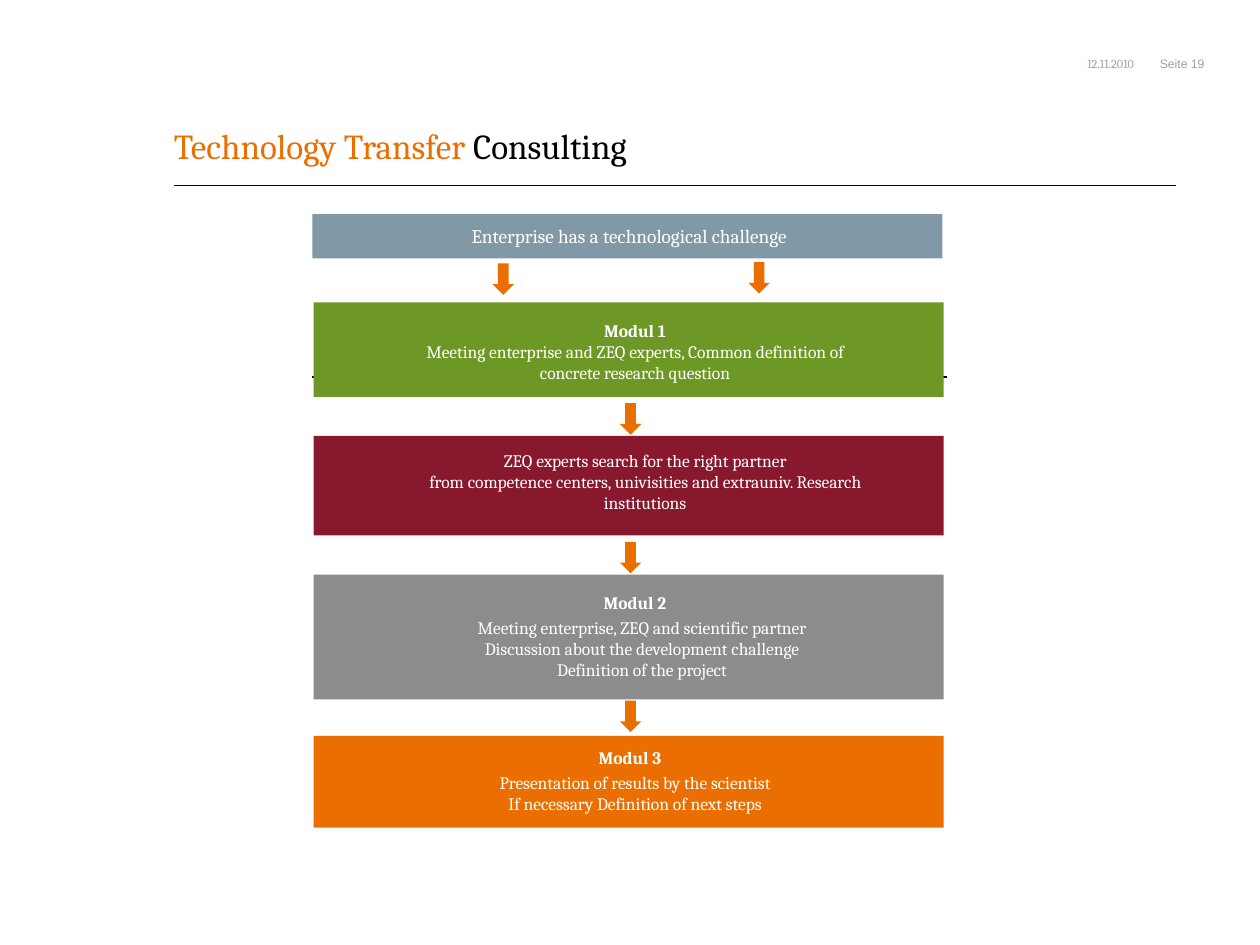
from pptx import Presentation
from pptx.dml.color import RGBColor
from pptx.enum.shapes import MSO_CONNECTOR, MSO_SHAPE
from pptx.enum.text import MSO_ANCHOR, PP_ALIGN
from pptx.oxml.ns import qn
from pptx.util import Inches, Pt
from lxml import etree

COLORS = {
    "orange": "EB6E00", "blue": "8199A7", "green": "6E9825", "red": "88182E",
    "gray": "8C8C8C", "muted": "A0A0A0", "white": "FFFFFF", "black": "000000",
}
STEP_LEFT, STEP_WIDTH = 2.49, 5
PADDING = (0.1, 0.05)


def color(name):
    return RGBColor.from_string(COLORS[name])


def add_text(slide, box, paragraphs, size, fill, align=PP_ALIGN.CENTER,
             font="Cambria", bold=None, wrap=True, inset=(0, 0)):
    frame = slide.shapes.add_textbox(*map(Inches, box)).text_frame
    frame.word_wrap = wrap
    frame.margin_left = frame.margin_right = Inches(inset[0])
    frame.margin_top = frame.margin_bottom = Inches(inset[1])
    for index, text in enumerate(paragraphs):
        paragraph = frame.paragraphs[0] if index == 0 else frame.add_paragraph()
        paragraph.text = text
        paragraph.alignment = align
        paragraph.font.name = font
        paragraph.font.size = Pt(size)
        paragraph.font.bold = bold
        paragraph.font.color.rgb = color(fill)
    return frame


def add_block(slide, preset, box, fill):
    block = slide.shapes.add_shape(preset, *map(Inches, box))
    block.shadow.inherit = False
    block.fill.solid()
    block.fill.fore_color.rgb = color(fill)
    block.line.fill.background()


def add_rule(slide, left, top, width, weight):
    rule = slide.shapes.add_connector(
        MSO_CONNECTOR.STRAIGHT, Inches(left), Inches(top),
        Inches(left + width), Inches(top))
    rule.line.color.rgb = color("black")
    rule.line.width = Pt(weight)
    etree.SubElement(rule._element.spPr, qn("a:effectLst"))


def add_header(slide, left, top):
    add_text(slide, (left, top, 0.56, 0.12), ["12.11.2010"], 7, "muted",
             PP_ALIGN.RIGHT)
    add_text(slide, (left + 0.67, top, 0.45, 0.12), ["Seite 19"], 7, "muted",
             PP_ALIGN.RIGHT, font="Arial", wrap=False)


def add_title(slide, left, top, width, height):
    frame = add_text(slide, (left, top, width, height), [""], 20, "black",
                     PP_ALIGN.LEFT)
    frame.vertical_anchor = MSO_ANCHOR.BOTTOM
    title = frame.paragraphs[0]
    title.line_spacing = Pt(24)
    for text, fill in (("Technology Transfer ", "orange"), ("Consulting", "black")):
        run = title.add_run()
        run.text = text
        run.font.name = "Cambria"
        run.font.size = Pt(20)
        run.font.color.rgb = color(fill)
    add_rule(slide, left, top + 0.87, 7.95, 0.75)


def add_challenge(slide, left, top, width, height):
    add_block(slide, MSO_SHAPE.RECTANGLE, (left, top, width, height), "blue")
    add_text(slide, (left + 1.15, top + 0.08, 2.73, 0.19),
             ["Enterprise has a technological challenge"], 11, "white", wrap=False)


def add_meeting(slide, left, top, width, height):
    add_rule(slide, left - 0.01, top + 0.59, width + 0.04, 1)
    add_block(slide, MSO_SHAPE.RECTANGLE, (left, top, width, height), "green")
    frame = add_text(slide, (left + 0.62, top + 0.09, 3.86, 0.61),
                     ["Modul 1\vMeeting enterprise and ZEQ experts, Common "
                      "definition of concrete research question"],
                     10, "white", inset=PADDING)
    frame.paragraphs[0].runs[0].font.bold = True


def add_search(slide, left, top, width, height):
    add_block(slide, MSO_SHAPE.RECTANGLE, (left, top, width, height), "red")
    add_text(slide, (left + 0.78, top + 0.11, 3.7, 0.5),
             ["ZEQ experts search for the right partner",
              "from competence centers, univisities and extrauniv. "
              "Research institutions"], 10, "white")


def add_module(slide, box, fill, heading, heading_offset, lines, lines_box):
    left, top = box[:2]
    add_block(slide, MSO_SHAPE.RECTANGLE, box, fill)
    add_text(slide, (left + heading_offset[0], top + heading_offset[1], 4.96, 0.27),
             [heading], 10, "white", bold=True, inset=PADDING)
    dx, dy, width, height = lines_box
    add_text(slide, (left + dx, top + dy, width, height), lines, 10, "white",
             wrap=False)


def add_arrows(slide, positions):
    for left, top in positions:
        add_block(slide, MSO_SHAPE.DOWN_ARROW, (left, top, 0.17, 0.25), "orange")


def main():
    deck = Presentation()
    deck.slide_width, deck.slide_height = Inches(10), Inches(7.5)
    slide = deck.slides.add_slide(deck.slide_layouts[6])

    add_header(slide, 8.44, 0.45)
    add_title(slide, 1.38, 0.6, 8.16, 0.72)
    add_challenge(slide, 2.48, 1.7, STEP_WIDTH, 0.35)
    add_meeting(slide, STEP_LEFT, 2.4, STEP_WIDTH, 0.75)
    add_search(slide, STEP_LEFT, 3.46, STEP_WIDTH, 0.79)
    add_module(slide, (STEP_LEFT, 4.56, STEP_WIDTH, 0.99), "gray",
               "Modul 2", (0.07, 0.09),
               ["Meeting enterprise, ZEQ and scientific partner",
                "Discussion about the development challenge",
                "Definition of the project"], (1.19, 0.34, 2.83, 0.5))
    add_module(slide, (STEP_LEFT, 5.84, STEP_WIDTH, 0.73), "orange",
               "Modul 3", (0.03, 0.04),
               ["Presentation of results by the scientist",
                "If necessary Definition of next steps"], (1.37, 0.29, 2.36, 0.34))
    add_arrows(slide, [(3.91, 2.09), (5.94, 2.08), (4.92, 3.2), (4.92, 4.3),
                       (4.92, 5.56)])
    deck.save("out.pptx")


if __name__ == "__main__":
    main()
